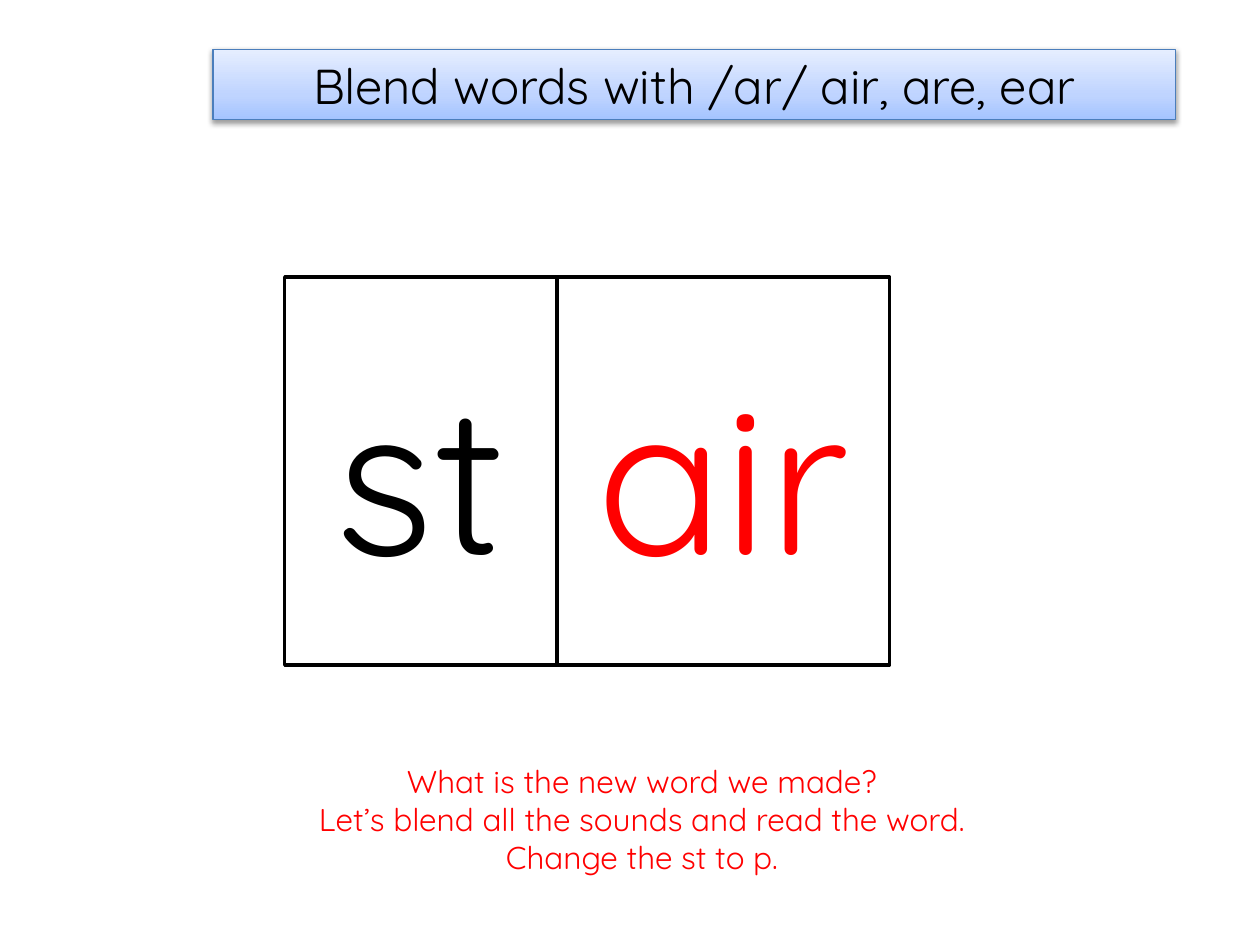
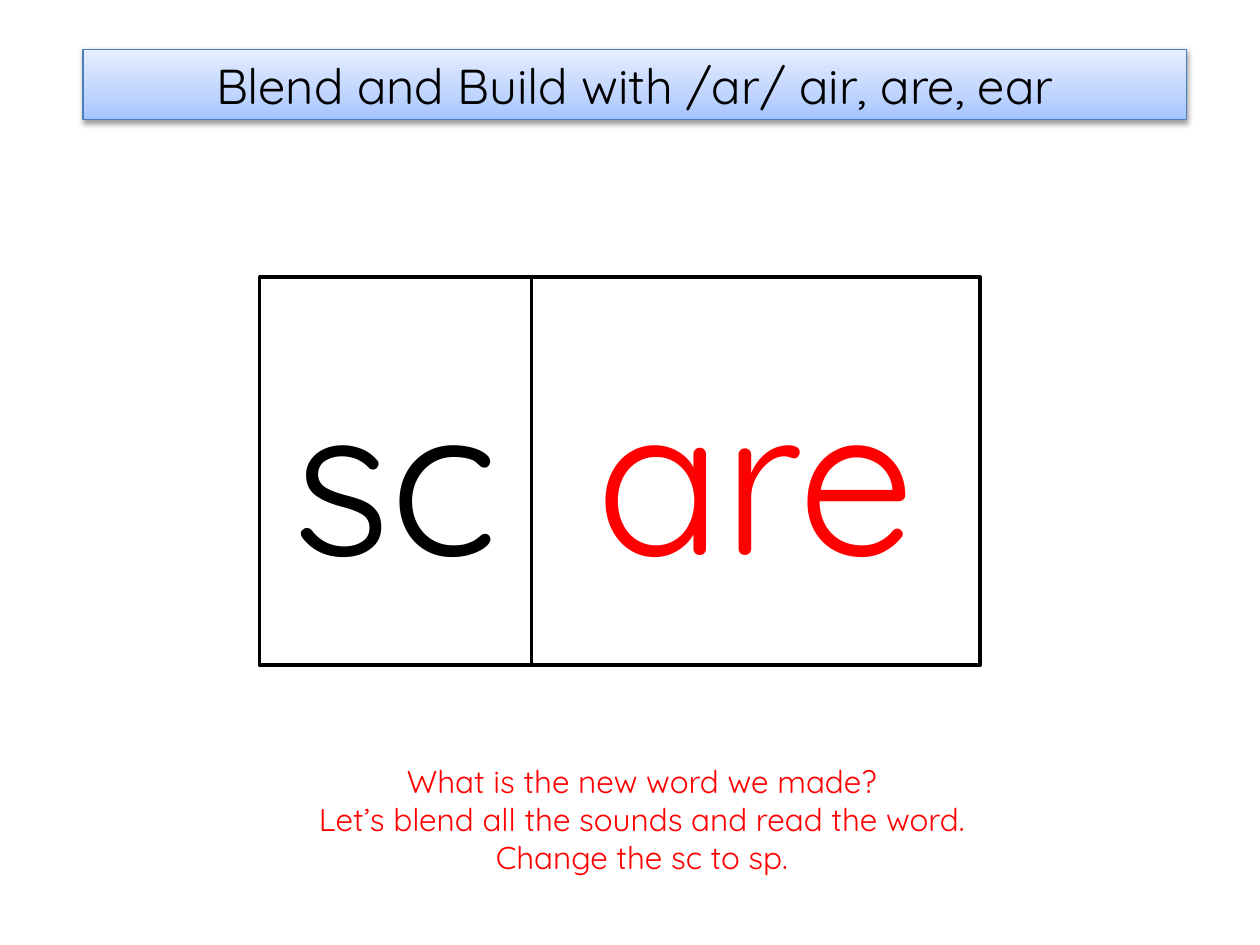
from lxml import etree
from pptx import Presentation
from pptx.dml.color import RGBColor
from pptx.enum import shapes, text
from pptx.oxml.ns import qn
from pptx.util import Inches, Pt

FONT = "Quicksand"
BLACK, RED, WHITE = "000000", "FF0000", "FFFFFF"
BAND_LINE = "4B7EBC"
BAND_STOPS = [(0, "A4C4FF"), (35, "BFD4FF"), (100, "E6EEFF")]
BAND_TOP, BAND_HEIGHT = 0.39, 0.56
TILE_TOP, TILE_HEIGHT = 2.2, 3.08
ONSET_WIDTH = 2.16


def color(value):
    return RGBColor.from_string(value)


def write_lines(shape, lines, size, ink):
    """Fill a shape with centred paragraphs, one per line."""
    frame = shape.text_frame
    frame.word_wrap = True
    for index, line in enumerate(lines):
        paragraph = frame.add_paragraph() if index else frame.paragraphs[0]
        paragraph.alignment = text.PP_ALIGN.CENTER
        run = paragraph.add_run()
        run.text = line
        run.font.name = FONT
        run.font.size = Pt(size)
        run.font.color.rgb = color(ink)


def add_color_element(parent, value):
    return etree.SubElement(parent, qn("a:srgbClr"), val=value)


def fill_band(shape):
    """Three-stop gradient, light at the top."""
    shape.fill.gradient()
    shape.fill.gradient_angle = 90
    stops = shape.element.spPr.find(".//" + qn("a:gsLst"))
    for stop in list(stops):
        stops.remove(stop)
    for position, value in BAND_STOPS:
        stop = etree.SubElement(stops, qn("a:gs"), pos=str(position * 1000))
        add_color_element(stop, value)


def add_drop_shadow(shape):
    shape.shadow.inherit = False
    effects = shape.element.spPr.find(qn("a:effectLst"))
    shadow = etree.SubElement(
        effects, qn("a:outerShdw"), blurRad=str(Pt(3.1)), dist=str(Pt(1.6)),
        dir=str(90 * 60000), rotWithShape="0")
    shade = add_color_element(shadow, BLACK)
    etree.SubElement(shade, qn("a:alpha"), val="38000")


def format_title(slide, title, left, width):
    band = slide.shapes.title
    band.left, band.top = Inches(left), Inches(BAND_TOP)
    band.width, band.height = Inches(width), Inches(BAND_HEIGHT)
    fill_band(band)
    band.line.color.rgb = color(BAND_LINE)
    band.line.width = Pt(0.75)
    add_drop_shadow(band)
    band.text_frame.auto_size = text.MSO_AUTO_SIZE.NONE
    band.text_frame.vertical_anchor = text.MSO_ANCHOR.MIDDLE
    write_lines(band, [title], 28, BLACK)


def add_sound_tile(slide, letters, left, width, ink):
    tile = slide.shapes.add_shape(
        shapes.MSO_SHAPE.RECTANGLE, Inches(left), Inches(TILE_TOP),
        Inches(width), Inches(TILE_HEIGHT))
    tile.shadow.inherit = False
    tile.fill.solid()
    tile.fill.fore_color.rgb = color(WHITE)
    tile.line.color.rgb = color(BLACK)
    tile.line.width = Pt(2)
    tile.text_frame.vertical_anchor = text.MSO_ANCHOR.MIDDLE
    write_lines(tile, [letters], 120, ink)


def add_prompt(slide, onset, next_onset):
    box = slide.shapes.add_textbox(
        Inches(1.61), Inches(6), Inches(6.97), Inches(1.01))
    box.text_frame.auto_size = text.MSO_AUTO_SIZE.SHAPE_TO_FIT_TEXT
    write_lines(box, [
        "What is the new word we made?",
        "Let’s blend all the sounds and read the word.",
        f"Change the {onset} to {next_onset}.",
    ], 18, RED)


def add_blend_slide(presentation, title, band, onset, rime, next_onset,
                    tiles_left, rime_width):
    slide = presentation.slides.add_slide(presentation.slide_layouts[5])
    format_title(slide, title, *band)
    # The two tiles sit side by side and spell the word
    add_sound_tile(slide, onset, tiles_left, ONSET_WIDTH, BLACK)
    add_sound_tile(slide, rime, tiles_left + ONSET_WIDTH, rime_width, RED)
    add_prompt(slide, onset, next_onset)


def main():
    presentation = Presentation()
    presentation.slide_width = Inches(10)
    presentation.slide_height = Inches(7.5)
    add_blend_slide(
        presentation, "Blend words with /ar/ air, are, ear", (1.69, 7.64),
        "st", "air", "p", tiles_left=2.26, rime_width=2.64)
    add_blend_slide(
        presentation, "Blend and Build with /ar/ air, are, ear", (0.66, 8.76),
        "sc", "are", "sp", tiles_left=2.06, rime_width=3.56)
    presentation.save("out.pptx")


if __name__ == "__main__":
    main()
